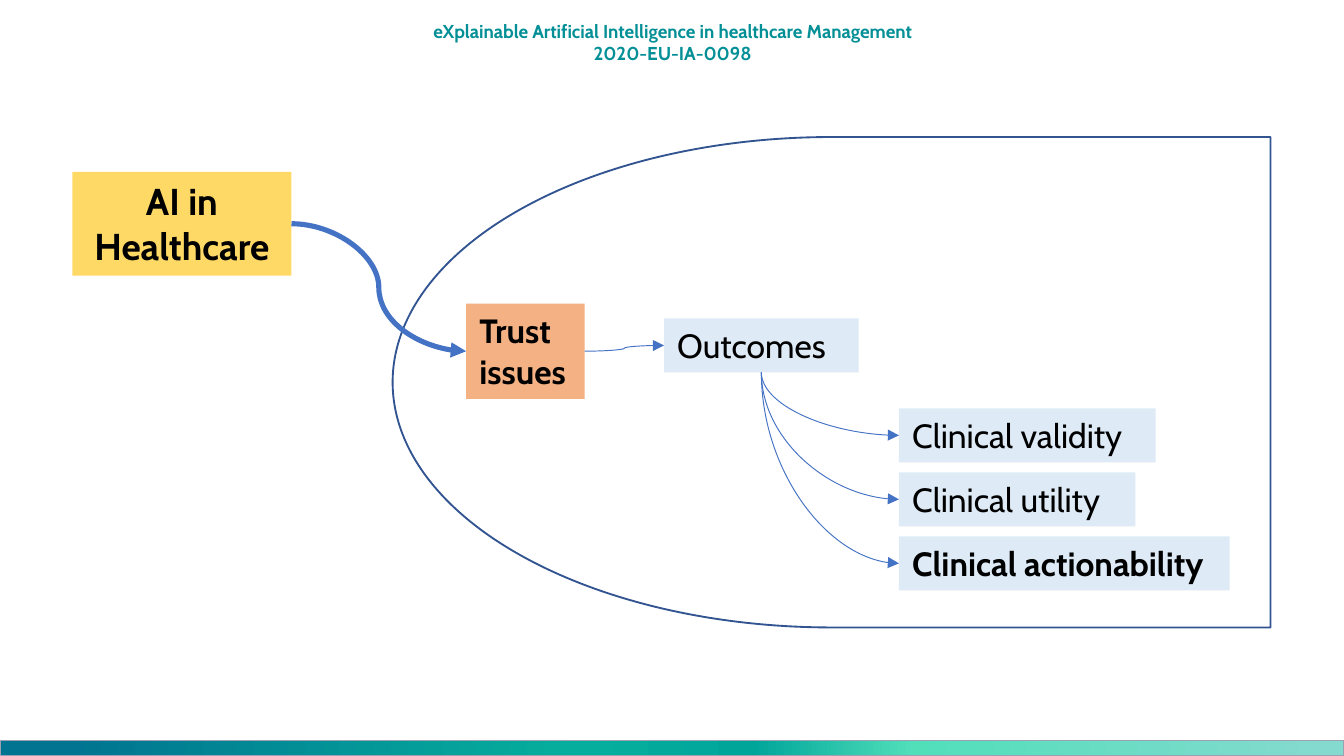
from lxml import etree
from pptx import Presentation
from pptx.dml.color import RGBColor
from pptx.enum.shapes import MSO_CONNECTOR, MSO_SHAPE
from pptx.enum.text import MSO_ANCHOR, PP_ALIGN
from pptx.oxml.ns import qn
from pptx.util import Cm, Pt

RECTANGLE = MSO_SHAPE.RECTANGLE
DELAY = MSO_SHAPE.FLOWCHART_DELAY
CURVE = MSO_CONNECTOR.CURVE
LEFT, CENTER = PP_ALIGN.LEFT, PP_ALIGN.CENTER
TOP = MSO_ANCHOR.TOP

FONT = "Cabin"
COLORS = {
    "header": "038F96",
    "text": "000000",
    "topic": "FFD966",
    "issue": "F4B183",
    "outcome": "DEEBF7",
    "arrow": "4472C4",
    "boundary": "325491",
    "bar_line": "9DA0B2",
}
BAR_STOPS = [(5, "007490"), (43, "06AF9D"), (56, "00A59A"), (68, "51DFBA"), (99, "85DACF")]

WIDTH, HEIGHT = 25.4, 14.29
ROW_HEIGHT = 1.02
OUTCOME_LEFT, OUTCOME_TOP, OUTCOME_PITCH = 16.99, 7.72, 1.21
OUTCOMES = [
    ("Clinical validity", 4.85, False),
    ("Clinical utility", 4.47, False),
    ("Clinical actionability", 6.25, True),
]


def color(name):
    return RGBColor.from_string(COLORS[name])


def write(shape, text, size, bold, align, text_color="text"):
    frame = shape.text_frame
    frame.word_wrap = True
    frame.vertical_anchor = TOP
    paragraph = frame.paragraphs[0]
    paragraph.text = text
    paragraph.alignment = align
    font = paragraph.font
    font.name, font.size, font.bold = FONT, Pt(size), bold
    font.color.rgb = color(text_color)


def add_plain_shape(slide, preset, left, top, width, height):
    shape = slide.shapes.add_shape(preset, Cm(left), Cm(top), Cm(width), Cm(height))
    shape.shadow.inherit = False
    return shape


def add_header(slide, text):
    header = slide.shapes.add_textbox(Cm(7.87), Cm(0.25), Cm(9.68), Cm(1.12))
    write(header, text, 10, True, CENTER, "header")


def add_gradient_bar(slide):
    bar = add_plain_shape(slide, RECTANGLE, 0, 14, WIDTH, 0.28)
    bar.fill.gradient()
    bar.fill.gradient_angle = 0
    stops = bar._element.spPr.find(".//" + qn("a:gsLst"))
    for stop in list(stops):
        stops.remove(stop)
    for percent, hex_color in BAR_STOPS:
        stop = etree.SubElement(stops, qn("a:gs"), pos=str(percent * 1000))
        etree.SubElement(stop, qn("a:srgbClr"), val=hex_color)
    bar.line.color.rgb = color("bar_line")
    bar.line.width = Pt(0.75)


def add_boundary(slide):
    boundary = add_plain_shape(slide, DELAY, 7.42, 2.59, 16.59, 9.27)
    boundary.rotation = 180
    boundary.fill.background()
    boundary.line.color.rgb = color("boundary")
    boundary.line.width = Pt(1)


def add_box(slide, text, left, top, width, height, fill, size=18, bold=False, align=LEFT):
    box = add_plain_shape(slide, RECTANGLE, left, top, width, height)
    box.fill.solid()
    box.fill.fore_color.rgb = color(fill)
    box.line.fill.background()
    write(box, text, size, bold, align)
    return box


def add_arrow(slide, x1, y1, x2, y2, weight=0.5):
    """Draw an S-shaped arrow between two points given as lengths."""
    arrow = slide.shapes.add_connector(CURVE, x1, y1, x2, y2)
    arrow.line.color.rgb = color("arrow")
    arrow.line.width = Pt(weight)
    etree.SubElement(arrow.line._get_or_add_ln(), qn("a:tailEnd"), type="triangle")
    etree.SubElement(arrow._element.spPr, qn("a:effectLst"))
    return arrow


def add_bent_arrow(slide, x1, y1, x2, y2):
    """Draw a quarter curve that leaves downwards and arrives from the left."""
    mid_x, mid_y = (x1 + x2) // 2, (y1 + y2) // 2
    half_run, half_drop = (x2 - x1) // 2, (y2 - y1) // 2
    arrow = add_arrow(slide, mid_x + half_drop, mid_y - half_run,
                      mid_x - half_drop, mid_y + half_run)
    properties = arrow._element.spPr
    properties.find(qn("a:xfrm")).set("rot", str(270 * 60000))
    properties.find(qn("a:prstGeom")).set("prst", "curvedConnector2")


def right_middle(box):
    return box.left + box.width, box.top + box.height // 2


def left_middle(box):
    return box.left, box.top + box.height // 2


def bottom_middle(box):
    return box.left + box.width // 2, box.top + box.height


def main():
    prs = Presentation()
    prs.slide_width, prs.slide_height = Cm(WIDTH), Cm(HEIGHT)
    slide = prs.slides.add_slide(prs.slide_layouts[6])

    add_header(slide, "eXplainable Artificial Intelligence in healthcare Management 2020-EU-IA-0098")
    add_gradient_bar(slide)
    add_boundary(slide)

    topic = add_box(slide, "AI in Healthcare", 1.37, 3.25, 4.14, 1.96, "topic", 20, True, CENTER)
    trust = add_box(slide, "Trust issues", 8.81, 5.74, 2.24, 1.8, "issue", bold=True)
    outcomes = add_box(slide, "Outcomes", 12.55, 6.02, 3.68, ROW_HEIGHT, "outcome")
    add_arrow(slide, *right_middle(topic), *left_middle(trust), weight=2.75)
    add_arrow(slide, *right_middle(trust), *left_middle(outcomes))

    for row, (label, width, bold) in enumerate(OUTCOMES):
        top = OUTCOME_TOP + row * OUTCOME_PITCH
        outcome = add_box(slide, label, OUTCOME_LEFT, top, width, ROW_HEIGHT, "outcome", bold=bold)
        add_bent_arrow(slide, *bottom_middle(outcomes), *left_middle(outcome))

    prs.save("out.pptx")


if __name__ == "__main__":
    main()
